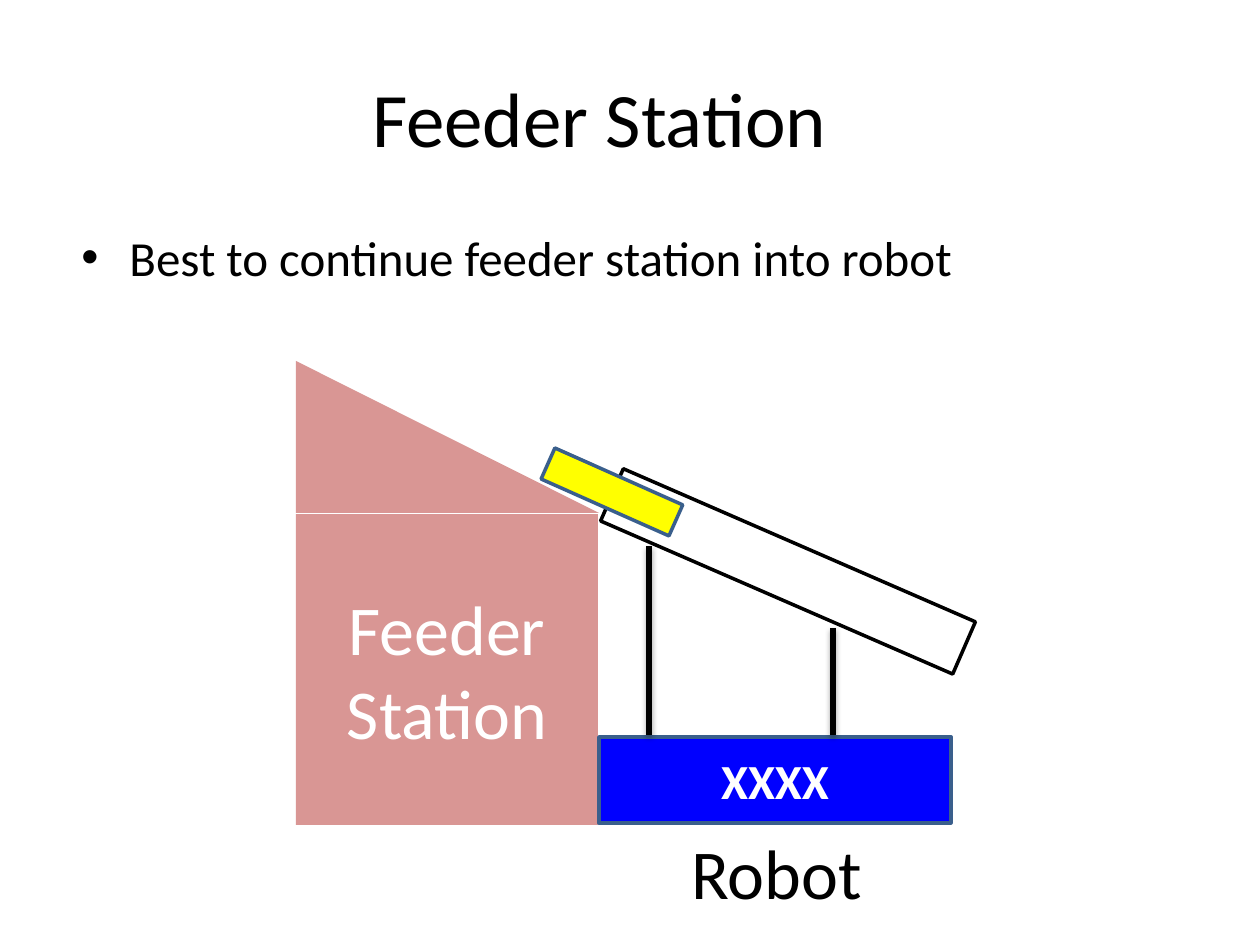
from lxml import etree
from pptx import Presentation
from pptx.dml.color import RGBColor
from pptx.enum.shapes import MSO_CONNECTOR, MSO_SHAPE
from pptx.enum.text import MSO_ANCHOR, MSO_AUTO_SIZE, PP_ALIGN
from pptx.oxml import parse_xml
from pptx.oxml.ns import nsdecls, qn
from pptx.util import Emu, Pt

RECTANGLE = MSO_SHAPE.RECTANGLE
RIGHT_TRIANGLE = MSO_SHAPE.RIGHT_TRIANGLE
STRAIGHT = MSO_CONNECTOR.STRAIGHT
LEFT, CENTER = PP_ALIGN.LEFT, PP_ALIGN.CENTER
TOP, MIDDLE = MSO_ANCHOR.TOP, MSO_ANCHOR.MIDDLE
FIT_SHAPE = MSO_AUTO_SIZE.SHAPE_TO_FIT_TEXT

PX_PER_INCH = 126
BLACK, WHITE, PINK = "000000", "FFFFFF", "D99694"
BLUE, YELLOW, STEEL = "0000FF", "FFFF00", "3A5F8C"
SHADOW = f"""<a:effectLst {nsdecls("a")}>
  <a:outerShdw blurRad="40000" dist="20000" dir="5400000" rotWithShape="0">
    <a:srgbClr val="{BLACK}"><a:alpha val="38000"/></a:srgbClr>
  </a:outerShdw>
</a:effectLst>"""


def px(length):
    """Turn pixels into EMU."""
    return Emu(round(length * 914400 / PX_PER_INCH))


def rgb(color):
    """Turn a hex string into a colour."""
    return RGBColor.from_string(color)


def write(frame, text, size=28, color=BLACK, bold=False, align=LEFT,
          anchor=TOP, wrap=True, bullet_indent=0):
    """Fill a text frame with one paragraph per line of text."""
    frame.word_wrap = wrap
    frame.vertical_anchor = anchor
    for index, line in enumerate(text.split("\n")):
        para = frame.add_paragraph() if index else frame.paragraphs[0]
        para.alignment = align
        if bullet_indent:
            properties = para._p.get_or_add_pPr()
            properties.set("marL", str(px(bullet_indent)))
            properties.set("indent", str(-px(bullet_indent)))
            etree.SubElement(properties, qn("a:buFont")).set("typeface", "Arial")
            etree.SubElement(properties, qn("a:buChar")).set("char", "•")
        span = para.add_run()
        span.text = line
        span.font.name = "Calibri"
        span.font.size = Pt(size)
        span.font.bold = bold
        span.font.color.rgb = rgb(color)


class Painter:
    """Draws styled elements on the current page."""

    def __init__(self, page):
        self.page = page

    def label(self, left, top, width, height, text, **style):
        """Add a text box."""
        box = self.page.shapes.add_textbox(px(left), px(top), px(width), px(height))
        write(box.text_frame, text, **style)
        return box

    def shape(self, kind, left, top, width, height, fill=None, line=None, rotation=0):
        """Add a preset shape."""
        shape = self.page.shapes.add_shape(kind, px(left), px(top), px(width), px(height))
        shape.shadow.inherit = False
        shape.rotation = rotation
        if fill:
            shape.fill.solid()
            shape.fill.fore_color.rgb = rgb(fill)
        else:
            shape.fill.background()
        if line:
            shape.line.color.rgb = rgb(line)
            shape.line.width = Pt(2)
        else:
            shape.line.fill.background()
        return shape

    def post(self, x, top, bottom):
        """Add a vertical line with a soft shadow."""
        post = self.page.shapes.add_connector(STRAIGHT, px(x), px(top), px(x), px(bottom))
        post.line.color.rgb = rgb(BLACK)
        post.line.width = Pt(3)
        post._element.spPr.append(parse_xml(SHADOW))


def main():
    """Build the feeder station slide."""
    deck = Presentation()
    deck.slide_width, deck.slide_height = px(1260), px(945)
    painter = Painter(deck.slides.add_slide(deck.slide_layouts[6]))

    painter.label(241, 38, 717, 158, "Feeder Station", size=44, align=CENTER, anchor=MIDDLE)
    painter.label(69, 221, 1128, 83, "Best to continue feeder station into robot",
                  bullet_indent=48)

    painter.shape(RIGHT_TRIANGLE, 296, 361, 303, 152, PINK)
    station = painter.shape(RECTANGLE, 296, 514, 302, 311, PINK)
    write(station.text_frame, "Feeder\nStation", size=40, color=WHITE,
          align=CENTER, anchor=MIDDLE)
    robot = painter.shape(RECTANGLE, 599, 737, 352, 86, BLUE, STEEL)
    write(robot.text_frame, "XXXX", color=WHITE, bold=True, align=CENTER, anchor=MIDDLE)

    painter.shape(RECTANGLE, 596, 543, 384, 57, line=BLACK, rotation=23.5)
    for x, top in ((649, 546), (833, 628)):
        painter.post(x, top, 735)
    painter.shape(RECTANGLE, 542, 475, 140, 34, YELLOW, STEEL, rotation=24)

    robot_label = painter.label(679, 823, 198, 97, "Robot", size=40, wrap=False)
    robot_label.text_frame.auto_size = FIT_SHAPE
    deck.save("out.pptx")


if __name__ == "__main__":
    main()
